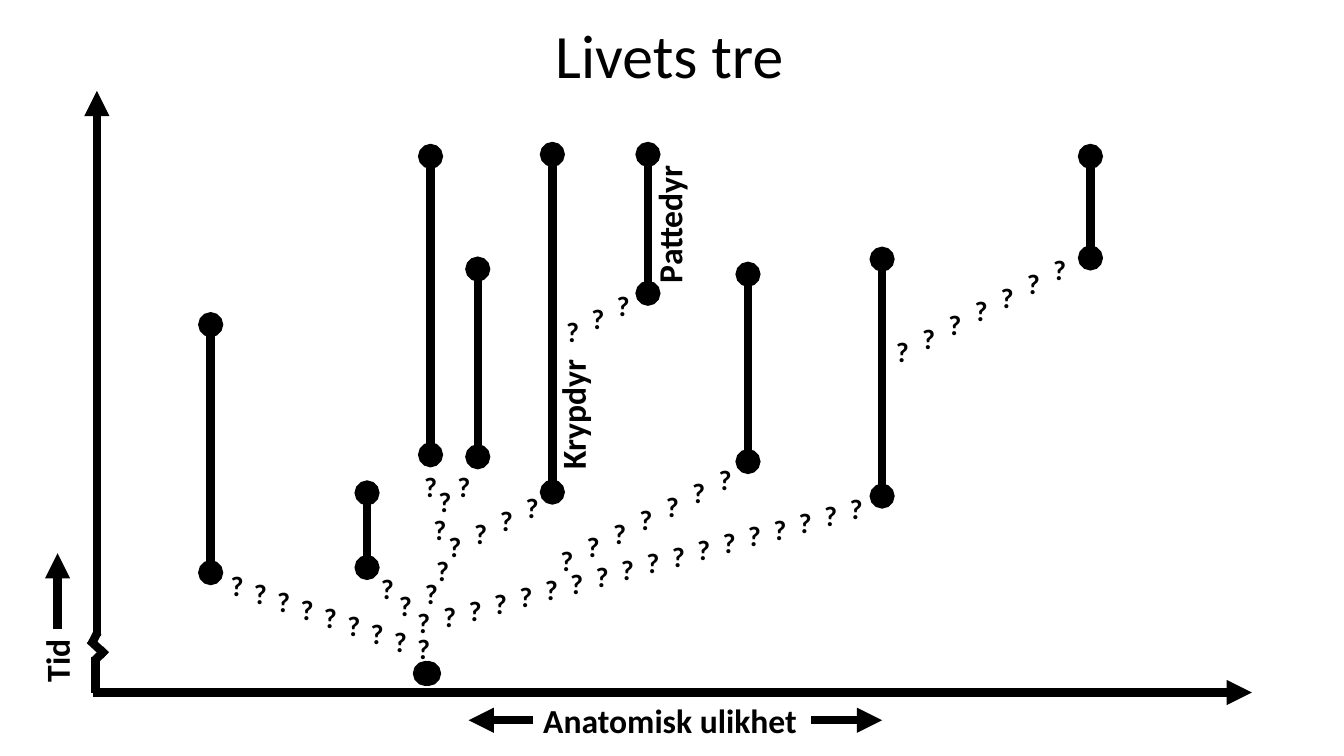
"""Build the slide "Livets tre": lineages over time, joined by trails of question marks."""
import dataclasses

import pptx
import pptx.dml.color
import pptx.enum.dml
import pptx.enum.shapes
import pptx.enum.text
import pptx.oxml
import pptx.oxml.ns
import pptx.util

Cm = pptx.util.Cm
Pt = pptx.util.Pt


@dataclasses.dataclass(frozen=True)
class Theme:
    """Colours, font and sizes used on the slide."""
    ink: pptx.dml.color.RGBColor = pptx.dml.color.RGBColor(0, 0, 0)
    font: str = "Calibri"
    title: int = 44
    label: int = 24
    mark: int = 20
    stroke: int = 6


THEME = Theme()

AXES = [
    ((2.34, 17.45), (31.55, 17.45)),
    ((2.44, 16.03), (2.44, 2.29)),
]
DIRECTION_ARROWS = [
    ((1.45, 15.85), (1.45, 13.94)),
    ((20.45, 18.15), (22.23, 18.15)),
    ((13.44, 18.15), (11.81, 18.15)),
]
AXIS_BREAK = [
    ((2.41, 16.56), (2.41, 17.45)),
    ((2.67, 16.36), (2.39, 16.64)),
    ((2.29, 16.26), (2.46, 15.93)),
    ((2.67, 16.51), (2.26, 16.13)),
]
LINEAGES = [
    (5.31, 8.18, 14.43),
    (12.04, 6.78, 11.51),
    (9.25, 12.42, 14.3),
    (27.48, 3.94, 6.5),
    (13.92, 3.89, 12.4),
    (16.33, 3.89, 7.39),
    (18.85, 6.91, 11.63),
    (10.85, 3.94, 11.46),
    (22.23, 6.53, 12.5),
]
ANCESTOR = ((10.72, 16.97), (10.8, 16.97))
LABELS = [
    ("Anatomisk ulikhet", (13.44, 17.5, 7.01, 1.27), 0),
    ("Tid", (-2.08, 13.31, 7.01, 1.27), 270),
    ("Pattedyr", (14.5, 4.39, 4.72, 1.27), 270),
    ("Krypdyr", (12.07, 9.09, 4.72, 1.27), 270),
]
TRAILS = [
    ((22.33, 8.31), (26.29, 6.25), 7),
    ((11.05, 13.21), (13.0, 12.24), 4),
    ((14.02, 7.8), (15.29, 7.14), 3),
    ((13.87, 13.56), (17.86, 11.53), 7),
    ((10.92, 14.99), (21.16, 12.27), 17),
    ((5.56, 14.2), (9.68, 15.62), 8),
    ((9.35, 14.27), (10.26, 15.14), 3),
    ((10.46, 14.4), (10.74, 13.82), 2),
    ((10.44, 11.71), (10.8, 12.09), 2),
    ((11.28, 11.71), (11.28, 11.71), 1),
    ((10.67, 12.78), (10.67, 12.78), 1),
    ((10.26, 15.8), (10.26, 15.8), 1),
]


def apply_format(target, values):
    """Set each named attribute of the target."""
    for name, value in values.items():
        setattr(target, name, value)


def add_line(page, start, end, head=None, tail=None, dash=None):
    """Draw a thick line with optional end shapes and dash style."""
    connector = page.shapes.add_connector(
        pptx.enum.shapes.MSO_CONNECTOR.STRAIGHT, *map(Cm, start + end))
    connector.line.fill.solid()
    connector.line.fill.fore_color.rgb = THEME.ink
    apply_format(connector.line, {"width": Pt(THEME.stroke), "dash_style": dash})
    outline = connector.line.fill._xPr
    for tag, shape in (("a:headEnd", head), ("a:tailEnd", tail)):
        if shape:
            pptx.oxml.ns.qn(tag)
            element = pptx.oxml.parse_xml(
                f'<{tag} {pptx.oxml.ns.nsdecls("a")} type="{shape}"/>')
            outline.append(element)
    connector._element.spPr.append(pptx.oxml.parse_xml(
        f'<a:effectLst {pptx.oxml.ns.nsdecls("a")}/>'))


def add_text(page, text, frame, size, rotation=0, bold=True, **para_format):
    """Place one line of text in a box and return the box."""
    box = page.shapes.add_textbox(*map(Cm, frame))
    box.rotation = rotation
    apply_format(box.text_frame, {
        "word_wrap": True,
        "auto_size": pptx.enum.text.MSO_AUTO_SIZE.SHAPE_TO_FIT_TEXT,
    })
    para = box.text_frame.paragraphs[0]
    apply_format(para, para_format)
    span = para.add_run()
    span.text = text
    apply_format(span.font, {"name": THEME.font, "size": Pt(size), "bold": bold})
    span.font.color.rgb = THEME.ink
    return box


def add_title(page, text):
    """Place the centred slide title."""
    box = add_text(page, text, (13.34, -0.36, 7.06, 3.68), THEME.title, bold=False,
                   alignment=pptx.enum.text.PP_ALIGN.CENTER, line_spacing=0.9)
    apply_format(box.text_frame, {
        "auto_size": pptx.enum.text.MSO_AUTO_SIZE.NONE,
        "vertical_anchor": pptx.enum.text.MSO_ANCHOR.MIDDLE,
    })


def add_trail(page, start, end, count):
    """Space question marks evenly from start to end."""
    for index in range(count):
        share = index / max(count - 1, 1)
        left, top = (a + (b - a) * share for a, b in zip(start, end))
        add_text(page, "?", (left, top, 0.79, 1.12), THEME.mark)


def main():
    """Build and save the deck."""
    deck = pptx.Presentation()
    apply_format(deck, {"slide_width": Cm(33.87), "slide_height": Cm(19.05)})
    page = deck.slides.add_slide(deck.slide_layouts[6])
    add_title(page, "Livets tre")
    for start, end in AXES + DIRECTION_ARROWS:
        add_line(page, start, end, tail="triangle")
    for start, end in AXIS_BREAK:
        add_line(page, start, end)
    for x, top, bottom in LINEAGES:
        add_line(page, (x, top), (x, bottom), head="oval", tail="oval")
    add_line(page, *ANCESTOR, head="oval", tail="oval",
             dash=pptx.enum.dml.MSO_LINE.ROUND_DOT)
    for text, frame, rotation in LABELS:
        add_text(page, text, frame, THEME.label, rotation)
    for start, end, count in TRAILS:
        add_trail(page, start, end, count)
    deck.save("out.pptx")


if __name__ == "__main__":
    main()
